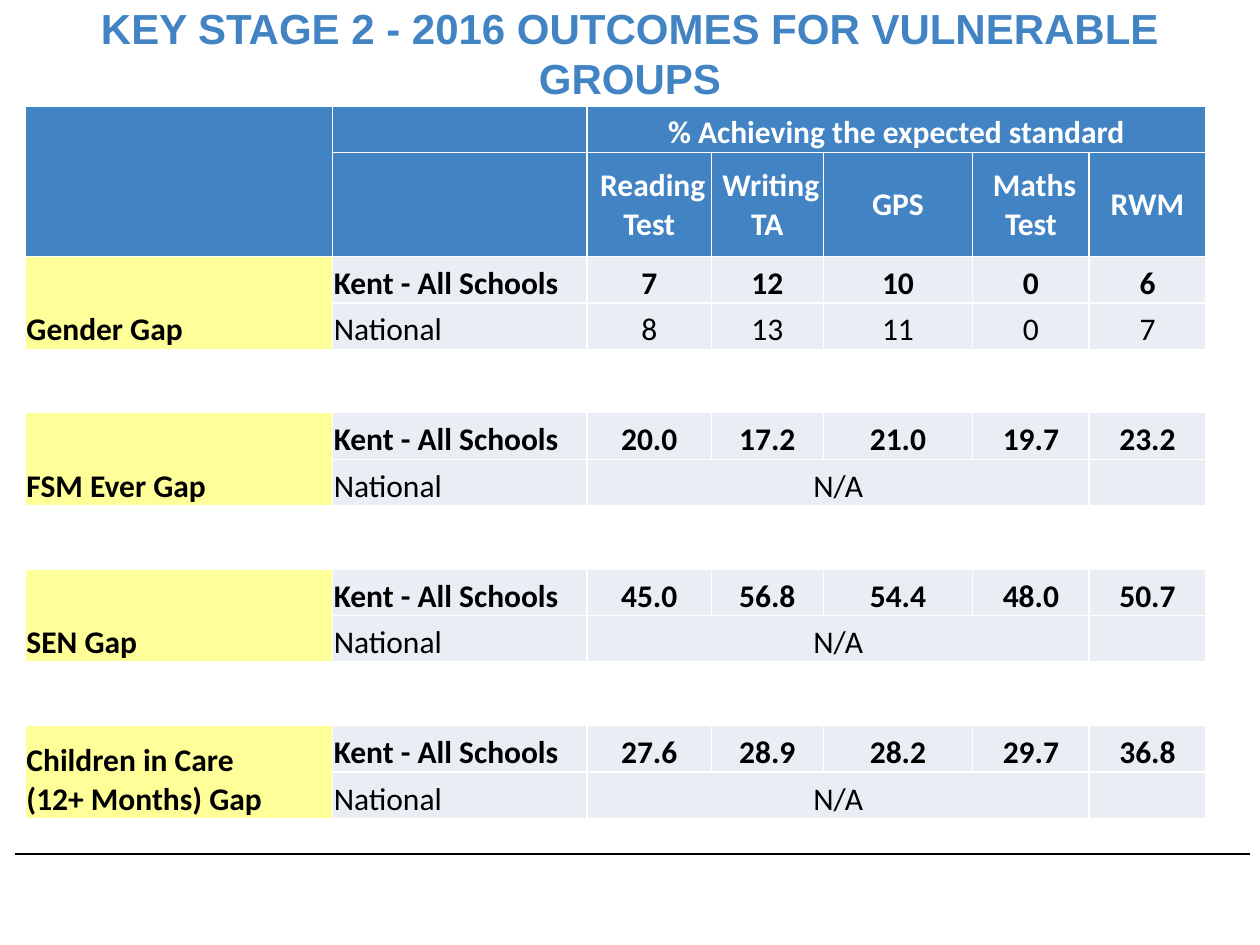
from lxml.etree import SubElement
from pptx import Presentation
from pptx.dml.color import RGBColor
from pptx.enum.shapes import MSO_CONNECTOR
from pptx.enum.text import MSO_ANCHOR, PP_ALIGN
from pptx.oxml.ns import qn
from pptx.util import Pt

BLUE = RGBColor(0x42, 0x83, 0xC4)
YELLOW = RGBColor(0xFF, 0xFF, 0x99)
PALE = RGBColor(0xE9, 0xED, 0xF4)
WHITE = RGBColor(0xFF, 0xFF, 0xFF)
BLACK = RGBColor(0, 0, 0)

COL_WIDTHS = [175.6, 145.6, 70.9, 64, 85.4, 66.6, 66.6]
HEADINGS = [" Reading Test", " Writing TA", "GPS", " Maths Test", "RWM"]
NOT_AVAILABLE = ["N/A", "", "", "", ""]
GROUPS = [
    ("Gender Gap", ["7", "12", "10", "0", "6"], ["8", "13", "11", "0", "7"]),
    ("FSM Ever Gap", ["20.0", "17.2", "21.0", "19.7", "23.2"], NOT_AVAILABLE),
    ("SEN Gap", ["45.0", "56.8", "54.4", "48.0", "50.7"], NOT_AVAILABLE),
    ("Children in Care\n(12+ Months) Gap", ["27.6", "28.9", "28.2", "29.7", "36.8"], NOT_AVAILABLE),
]


def format_text(tf, font, size, color, bold, align):
    for p in tf.paragraphs:
        p.alignment = align
        for r in p.runs:
            r.font.name = font
            r.font.size = Pt(size)
            r.font.bold = bold
            r.font.color.rgb = color


def add_borders(cell):
    tc_pr = cell._tc.get_or_add_tcPr()
    for side in ("a:lnL", "a:lnR", "a:lnT", "a:lnB"):
        ln = SubElement(tc_pr, qn(side), w=str(Pt(1)))
        fill = SubElement(ln, qn("a:solidFill"))
        SubElement(fill, qn("a:srgbClr"), val=str(WHITE))


prs = Presentation()
prs.slide_width, prs.slide_height = Pt(720), Pt(540)
s = prs.slides.add_slide(prs.slide_layouts[6])

rule = s.shapes.add_connector(MSO_CONNECTOR.STRAIGHT, Pt(8.64), Pt(488), Pt(714.24), Pt(488))
rule.line.color.rgb = BLACK
rule.line.width = Pt(1)
SubElement(rule._element.spPr, qn("a:effectLst"))

title = s.shapes.add_textbox(0, 0, Pt(720), Pt(60.5))
tf = title.text_frame
tf.word_wrap = True
tf.vertical_anchor = MSO_ANCHOR.MIDDLE
tf.text = "KEY STAGE 2 - 2016 OUTCOMES FOR VULNERABLE GROUPS"
format_text(tf, "Arial", 24, BLUE, True, PP_ALIGN.CENTER)

rows = [["", "", "% Achieving the expected standard", "", "", "", ""], ["", ""] + HEADINGS]
for i, (name, kent, national) in enumerate(GROUPS):
    if i:
        rows.append([""] * 7)
    rows.append([name, "Kent - All Schools"] + kent)
    rows.append(["", "National"] + national)
row_heights = [26.6, 59.4] + ([26.6, 26.6, 36.2] * len(GROUPS))[:-1]

table = s.shapes.add_table(
    len(rows), 7, Pt(14.4), Pt(60.5), Pt(sum(COL_WIDTHS)), Pt(sum(row_heights))
).table
for col, width in zip(table.columns, COL_WIDTHS):
    col.width = Pt(width)

for i, values in enumerate(rows):
    table.rows[i].height = Pt(row_heights[i])
    header = i < 2
    spacer = not header and not any(values)
    for j, value in enumerate(values):
        cell = table.cell(i, j)
        cell.margin_left = cell.margin_right = cell.margin_top = Pt(0.75)
        cell.margin_bottom = 0
        cell.vertical_anchor = MSO_ANCHOR.MIDDLE if i == 1 else MSO_ANCHOR.BOTTOM
        add_borders(cell)
        if spacer:
            cell.fill.background()
        else:
            cell.fill.solid()
            cell.fill.fore_color.rgb = BLUE if header else PALE if j else YELLOW
        cell.text_frame.text = value
        format_text(
            cell.text_frame, "Calibri", 18, WHITE if header else BLACK,
            values[1] != "National", PP_ALIGN.CENTER if j > 1 else PP_ALIGN.LEFT,
        )
    if values[2] == "N/A":
        table.cell(i, 2).merge(table.cell(i, 5))

table.cell(0, 2).merge(table.cell(0, 6))
for i in (0, 2, 5, 8, 11):
    table.cell(i, 0).merge(table.cell(i + 1, 0))

prs.save("out.pptx")
